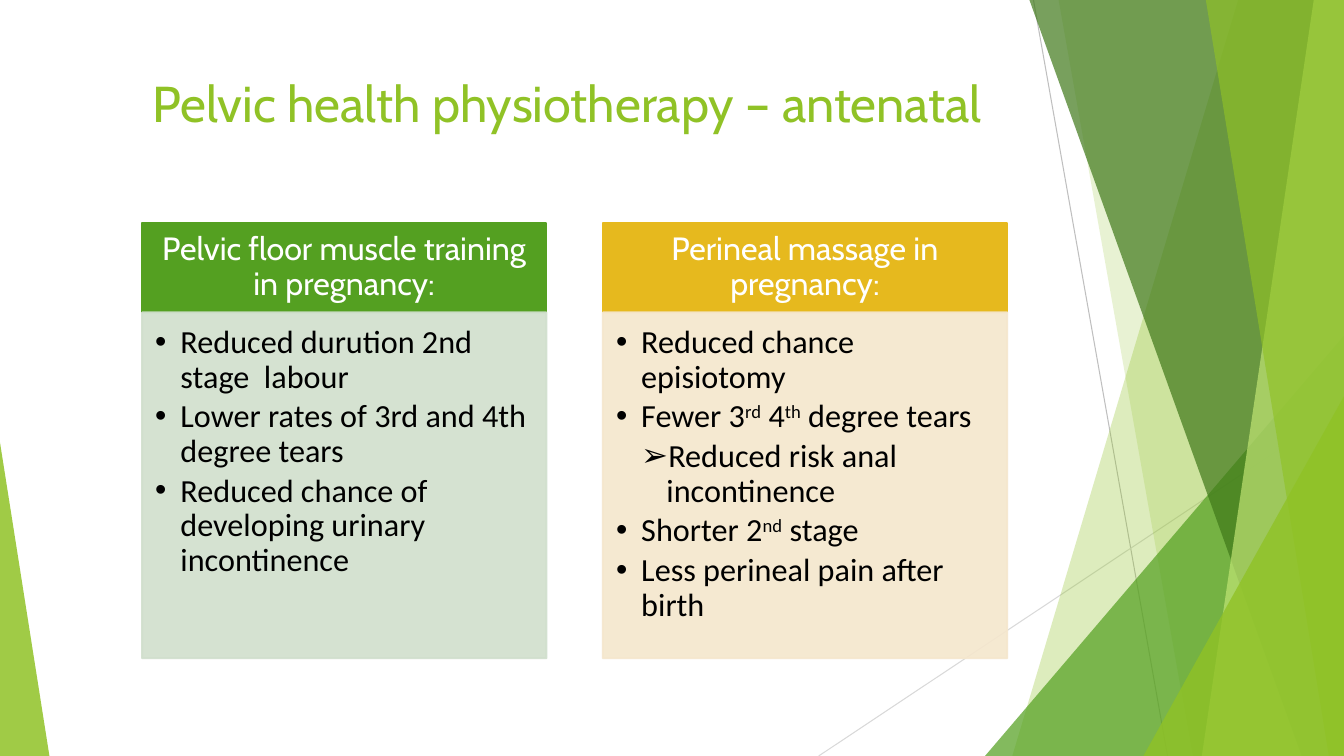
from pptx import Presentation
from pptx.dml.color import RGBColor
from pptx.enum.shapes import MSO_CONNECTOR, MSO_SHAPE
from pptx.enum.text import MSO_ANCHOR, MSO_AUTO_SIZE, PP_ALIGN
from pptx.oxml.ns import qn
from pptx.util import Inches, Pt
from lxml import etree

TRIANGLE = MSO_SHAPE.ISOSCELES_TRIANGLE
STRAIGHT = MSO_CONNECTOR.STRAIGHT
TOP, MIDDLE = MSO_ANCHOR.TOP, MSO_ANCHOR.MIDDLE
LEFT, CENTER = PP_ALIGN.LEFT, PP_ALIGN.CENTER
NO_FIT = MSO_AUTO_SIZE.NONE
COMPARISON_LAYOUT = 4

LIME = RGBColor(0x90, 0xC2, 0x26)
PALE_LIME = RGBColor(0xC0, 0xE4, 0x74)
GREEN = RGBColor(0x54, 0xA0, 0x21)
DARK_GREEN = RGBColor(0x3F, 0x78, 0x19)
GOLD = RGBColor(0xE6, 0xB9, 0x1E)
PALE_GREEN = RGBColor(0xD1, 0xDF, 0xCD)
PALE_GOLD = RGBColor(0xF5, 0xE7, 0xCD)
GREY = RGBColor(0xBF, 0xBF, 0xBF)
PALE_GREY = RGBColor(0xD9, 0xD9, 0xD9)
WHITE = RGBColor(0xFF, 0xFF, 0xFF)
BLACK = RGBColor(0, 0, 0)

WIDTH, HEIGHT = 13.33, 7.5
MARGIN, COLUMN_WIDTH, COLUMN_STEP = 1.41, 4.01, 4.57
HEADER_TOP, HEADER_HEIGHT, LIST_HEIGHT = 2.21, 0.89, 3.43
INDENT = 0.25
HEADER_INSETS = (0.18, 0.1, 0.18, 0.1)
LIST_INSETS = (0.13, 0.13, 0.18, 0.2)
BULLETS = ("•", "➢")

# Each list item is a level and its spans; every second span is superscript.
COLUMNS = [
    ("Pelvic floor muscle training in pregnancy:", GREEN, PALE_GREEN, [
        (0, ["Reduced durution 2nd stage  labour"]),
        (0, ["Lower rates of 3rd and 4th degree tears"]),
        (0, ["Reduced chance of developing urinary incontinence"]),
    ]),
    ("Perineal massage in pregnancy:", GOLD, PALE_GOLD, [
        (0, ["Reduced chance episiotomy"]),
        (0, ["Fewer 3", "rd", " 4", "th", " degree tears"]),
        (1, ["Reduced risk anal incontinence"]),
        (0, ["Shorter 2", "nd", " stage"]),
        (0, ["Less perineal pain after birth"]),
    ]),
]


def set_opacity(shape, percent):
    for color in shape._element.spPr.iter(qn("a:srgbClr")):
        etree.SubElement(color, qn("a:alpha"), val=str(percent * 1000))


def paint(shape, color, opacity):
    shape.shadow.inherit = False
    shape.fill.solid()
    shape.fill.fore_color.rgb = color
    shape.line.fill.background()
    set_opacity(shape, opacity)


def add_ray(page, start, end, color):
    ray = page.shapes.add_connector(STRAIGHT, *map(Inches, start + end))
    ray.line.color.rgb = color
    ray.line.width = Pt(0.75)
    etree.SubElement(ray._element.spPr, qn("a:effectLst"))


def add_shard(page, top_x, bottom_x, color, opacity):
    """Full-height band from a slanted left edge to the slide's right edge."""
    corners = [(WIDTH, 0), (WIDTH, HEIGHT), (bottom_x, HEIGHT)]
    outline = page.shapes.build_freeform(Inches(top_x), 0)
    outline.add_line_segments([(Inches(x), Inches(y)) for x, y in corners])
    paint(outline.convert_to_shape(), color, opacity)


def add_corner(page, left, width, height, apex, color, opacity):
    """Triangle standing on the bottom edge of the slide."""
    corner = page.shapes.add_shape(TRIANGLE, Inches(left), Inches(HEIGHT - height),
                                   Inches(width), Inches(height))
    corner.adjustments[0] = apex
    paint(corner, color, opacity)


def add_backdrop(page):
    add_ray(page, (10.25, 0), (11.58, HEIGHT), GREY)
    add_ray(page, (WIDTH, 4.03), (8.12, HEIGHT), PALE_GREY)
    add_shard(page, 12.28, 10.04, LIME, 30)
    add_shard(page, 10.5, 11.83, LIME, 20)
    add_corner(page, 9.77, 3.56, 4.17, 1, GREEN, 72)
    add_shard(page, 10.21, 12.91, DARK_GREEN, 70)
    add_shard(page, 13.03, 11.92, PALE_LIME, 70)
    add_shard(page, 11.96, 13.18, LIME, 65)
    add_corner(page, 11.34, 1.99, 3.57, 1, LIME, 80)
    add_corner(page, 0, 0.49, 3.11, 0, LIME, 85)


def place(box, left, top, width, height, insets, anchor):
    box.left, box.top, box.width, box.height = map(Inches, (left, top, width, height))
    frame = box.text_frame
    frame.auto_size = NO_FIT
    frame.word_wrap = True
    frame.vertical_anchor = anchor
    (frame.margin_left, frame.margin_top,
     frame.margin_right, frame.margin_bottom) = map(Inches, insets)


def set_font(para, name, size, color, align):
    para.alignment = align
    para.font.name = name
    para.font.size = Pt(size)
    para.font.bold = False
    para.font.color.rgb = color


def space(para, after):
    para.line_spacing = 0.9
    para.space_before = Pt(0)
    para.space_after = Pt(after)


def fill_panel(box, color, opacity):
    box.fill.solid()
    box.fill.fore_color.rgb = color
    box.line.color.rgb = color
    box.line.width = Pt(1.5)
    set_opacity(box, opacity)


def set_bullet(para, level):
    para.level = level
    properties = para._p.get_or_add_pPr()
    properties.set("marL", str(Inches(INDENT * (level + 1))))
    properties.set("indent", str(-Inches(INDENT)))
    bullet = etree.Element(qn("a:buChar"), char=BULLETS[level])
    properties.insert_element_before(bullet, "a:tabLst", "a:defRPr", "a:extLst")


def fill_title(box, text):
    place(box, MARGIN, 0.67, 11.15, 1.2, (0.1, 0.05, 0.1, 0.05), TOP)
    box.text_frame.text = text
    set_font(box.text_frame.paragraphs[0], "Cabin", 36, LIME, LEFT)


def fill_header(box, left, text, color):
    place(box, left, HEADER_TOP, COLUMN_WIDTH, HEADER_HEIGHT, HEADER_INSETS, MIDDLE)
    fill_panel(box, color, 100)
    box.text_frame.text = text
    para = box.text_frame.paragraphs[0]
    space(para, 0)
    set_font(para, "Cabin", 23, WHITE, CENTER)


def fill_list(box, left, items, color):
    place(box, left, HEADER_TOP + HEADER_HEIGHT, COLUMN_WIDTH, LIST_HEIGHT,
          LIST_INSETS, TOP)
    fill_panel(box, color, 90)
    frame = box.text_frame
    for index, (level, spans) in enumerate(items):
        para = frame.add_paragraph() if index else frame.paragraphs[0]
        space(para, 3.45)
        set_bullet(para, level)
        set_font(para, "Calibri", 23, BLACK, LEFT)
        for position, text in enumerate(spans):
            span = para.add_run()
            span.text = text
            if position % 2:
                span.font._element.set("baseline", "30000")


def main():
    deck = Presentation()
    deck.slide_width, deck.slide_height = Inches(WIDTH), Inches(HEIGHT)
    page = deck.slides.add_slide(deck.slide_layouts[COMPARISON_LAYOUT])
    title, *panels = page.placeholders
    add_backdrop(page)
    for box in (title, *panels):  # bring the text in front of the backdrop
        box._element.getparent().append(box._element)

    fill_title(title, "Pelvic health physiotherapy – antenatal")
    pairs = zip(panels[::2], panels[1::2])
    for index, (header, body) in enumerate(pairs):
        text, color, pale_color, items = COLUMNS[index]
        left = MARGIN + index * COLUMN_STEP
        fill_header(header, left, text, color)
        fill_list(body, left, items, pale_color)
    deck.save("out.pptx")


if __name__ == "__main__":
    main()
